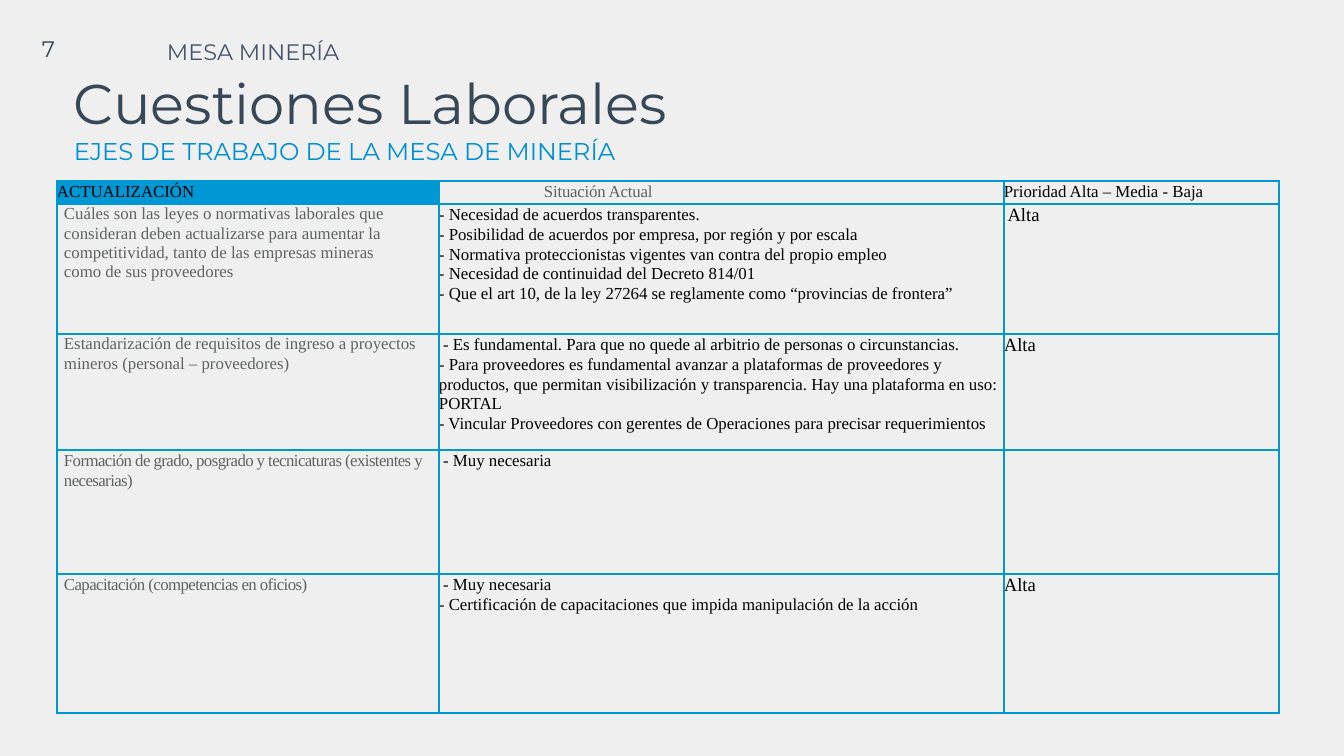
from lxml.etree import SubElement as Sub
from pptx import Presentation
from pptx.dml.color import RGBColor as RGB
from pptx.enum.text import MSO_ANCHOR as Anchor, PP_ALIGN as Align
from pptx.oxml.ns import qn
from pptx.util import Pt

PX = 914400 / 134.4
PAPER = RGB(0xEF, 0xEF, 0xEF)
SLATE = RGB(0x37, 0x47, 0x56)
NAVY = RGB(0x44, 0x54, 0x6A)
SKY = RGB(0x00, 0x90, 0xD0)
BLUE = RGB(0x00, 0x97, 0xD5)
GREY = RGB(0x5F, 0x62, 0x63)
BLACK = RGB(0, 0, 0)
SANS, SERIF = "Montserrat", "Times New Roman"


def px(n):
    return round(n * PX)


def write(para, text, size, color, face):
    run = para.add_run()
    run.text = text
    run.font.size = Pt(size)
    run.font.name = face
    run.font.color.rgb = color
    return run


deck = Presentation()
deck.slide_width, deck.slide_height = px(1344), px(756)
slide = deck.slides.add_slide(deck.slide_layouts[5])
slide.background.fill.solid()
slide.background.fill.fore_color.rgb = PAPER

# Title with subtitle
title = slide.shapes.title
title.left, title.top, title.width, title.height = map(px, (67, 62, 851, 109))
frame = title.text_frame
frame.word_wrap = True
frame.vertical_anchor = Anchor.TOP
frame.margin_left = frame.margin_right = px(7)
frame.margin_top = frame.margin_bottom = px(7)
heads = [("Cuestiones Laborales", 30, SLATE),
         ("EJES DE TRABAJO DE LA MESA DE MINERÍA", 13, SKY)]
for i, (text, size, color) in enumerate(heads):
    para = frame.add_paragraph() if i else frame.paragraphs[0]
    para.alignment = Align.LEFT
    write(para, text, size, color, SANS)

# Page number and section label
labels = [("7", (26, 23, 42, 52), 13, SLATE, Align.RIGHT, Anchor.MIDDLE),
          ("MESA MINERÍA", (160, 31, 444, 39), 7, NAVY, Align.LEFT, Anchor.TOP)]
for text, place, pad, color, align, anchor in labels:
    frame = slide.shapes.add_textbox(*map(px, place)).text_frame
    frame.word_wrap = True
    frame.vertical_anchor = anchor
    frame.margin_left = frame.margin_right = px(pad)
    frame.margin_top = frame.margin_bottom = px(pad)
    para = frame.paragraphs[0]
    para.alignment = align
    write(para, text, 12, color, SANS)

# Table of topics: topic, current state, priority
rows = [
    (["ACTUALIZACIÓN"], ["Situación Actual"], ["Prioridad Alta – Media - Baja"]),
    (["Cuáles son las leyes o normativas laborales que consideran deben "
      "actualizarse para aumentar la competitividad, tanto de las empresas "
      "mineras como de sus proveedores"],
     ["- Necesidad de acuerdos transparentes.",
      "- Posibilidad de acuerdos por empresa, por región y por escala",
      "- Normativa proteccionistas vigentes van contra del propio empleo",
      "- Necesidad de continuidad del Decreto 814/01",
      "- Que el art 10, de la ley 27264 se reglamente como “provincias de frontera”"],
     [" Alta"]),
    (["Estandarización de requisitos de ingreso a proyectos mineros "
      "(personal – proveedores)"],
     [" - Es fundamental. Para que no quede al arbitrio de personas o circunstancias.",
      "- Para proveedores es fundamental avanzar a plataformas de proveedores y "
      "productos, que permitan visibilización y transparencia. Hay una plataforma "
      "en uso: PORTAL",
      "- Vincular Proveedores con gerentes de Operaciones para precisar requerimientos"],
     ["Alta"]),
    (["Formación de grado, posgrado y tecnicaturas (existentes y necesarias)"],
     [" - Muy necesaria"], []),
    (["Capacitación (competencias en oficios)"],
     [" - Muy necesaria",
      "- Certificación de capacitaciones que impida manipulación de la acción"],
     ["Alta"]),
]
wide = [382, 565, 275]
tall = [23, 130, 116, 124, 139]
grid = slide.shapes.add_table(len(rows), len(wide), px(57), px(181),
                              px(sum(wide)), px(sum(tall))).table
grid.first_row = grid.horz_banding = False
for col, w in zip(grid.columns, wide):
    col.width = px(w)
for row, h in zip(grid.rows, tall):
    row.height = px(h)

for r, row in enumerate(rows):
    for c, lines in enumerate(row):
        cell = grid.cell(r, c)
        cell.margin_left = cell.margin_right = 0
        cell.margin_top = cell.margin_bottom = 0
        props = cell._tc.get_or_add_tcPr()
        for side in ("a:lnL", "a:lnR", "a:lnT", "a:lnB"):
            edge = Sub(props, qn(side), w=str(Pt(1)))
            Sub(Sub(edge, qn("a:solidFill")), qn("a:srgbClr"), val=str(BLUE))
        if r == c == 0:
            cell.fill.solid()
            cell.fill.fore_color.rgb = BLUE
        else:
            cell.fill.background()

        topic = r > 0 and c == 0
        state = r == 0 and c == 1
        size = 10 if r and c == 2 else 9
        color = GREY if topic or state else BLACK
        for i, text in enumerate(lines):
            para = cell.text_frame.add_paragraph() if i else cell.text_frame.paragraphs[0]
            para.line_spacing = 1.04 if topic and r < 3 else 1.07
            run = write(para, text, size, color, SERIF)
            if topic:
                para.space_before = Pt(3)
                para._p.get_or_add_pPr().set("marL", str(px(7)))
                if r > 2:
                    run.font._element.set("spc", "-30")
            elif r == 0 and c:
                para.space_before = Pt(2.4)
                if state:
                    para._p.get_or_add_pPr().set("marL", str(px(105)))
                    run.font._element.set("spc", "-10")

# The first topic wraps early
grid.cell(1, 0).margin_right = px(40)

deck.save("out.pptx")
